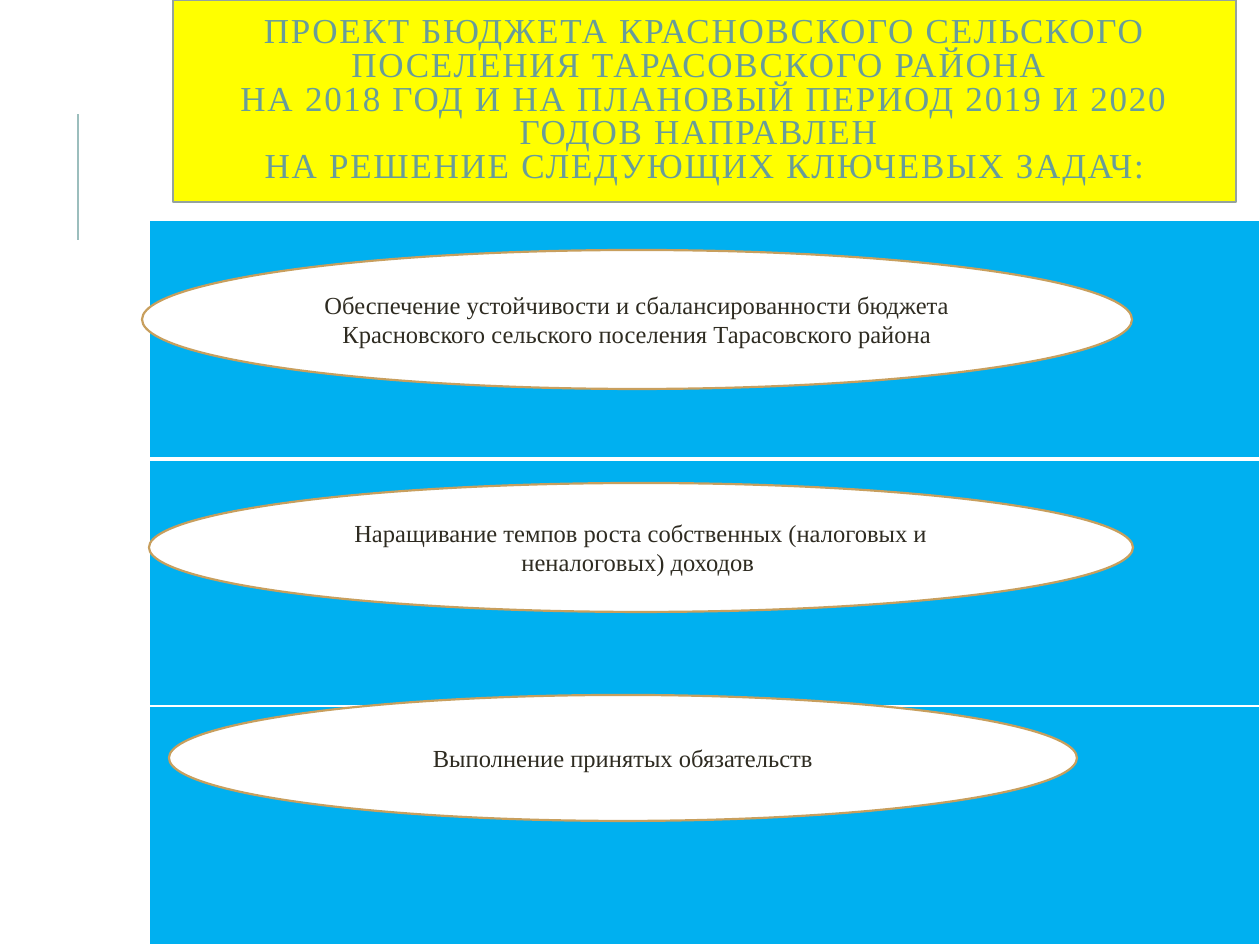
from dataclasses import dataclass

from lxml.etree import SubElement
from pptx import Presentation
from pptx.dml.color import RGBColor
from pptx.enum.shapes import MSO_CONNECTOR as Conn, MSO_SHAPE as Shape
from pptx.enum.text import MSO_ANCHOR as Anchor, PP_ALIGN as Align
from pptx.oxml import parse_xml
from pptx.oxml.ns import nsdecls, qn
from pptx.util import Emu, Pt

EMU_PER_PX = 914400 / 126
FONT = "Times New Roman"


@dataclass
class Box:
    shape: Shape
    x: int
    y: int
    w: int
    h: int
    fill: str
    line: str
    line_pt: float
    text: str
    size: int
    color: str


@dataclass
class Band:
    height: int
    bottom_pt: int


def px(n: int) -> Emu:
    return Emu(round(n * EMU_PER_PX))


def rgb(value: str) -> RGBColor:
    return RGBColor.from_string(value)


def task(x: int, y: int, w: int, h: int, text: str) -> Box:
    return Box(Shape.OVAL, x, y, w, h, "FFFFFF", "C89F5D", 1.25, text, 14, "2E2B21")


TITLE = Box(
    Shape.RECTANGLE, 173, 0, 1063, 202, "FFFF00", "95A39D", 0.75,
    "ПРОЕКТ БЮДЖЕТА КРАСНОВСКОГО СЕЛЬСКОГО ПОСЕЛЕНИЯ ТАРАСОВСКОГО РАЙОНА \v"
    "НА 2018 ГОД И НА ПЛАНОВЫЙ ПЕРИОД 2019 И 2020 ГОДОВ НАПРАВЛЕН \v"
    "НА РЕШЕНИЕ СЛЕДУЮЩИХ КЛЮЧЕВЫХ ЗАДАЧ:", 20, "689C9A")
BANDS = [Band(239, 3), Band(247, 1), Band(239, 1)]
TASKS = [
    task(169, 695, 908, 126, "Выполнение принятых обязательств"),
    task(142, 250, 990, 139, "Обеспечение устойчивости и сбалансированности бюджета "
         "Красновского сельского поселения Тарасовского района"),
    task(149, 483, 984, 129, "Наращивание темпов роста собственных (налоговых и "
         "неналоговых) доходов "),
]


def add_box(s, box: Box):
    sp = s.shapes.add_shape(box.shape, px(box.x), px(box.y), px(box.w), px(box.h))
    sp.shadow.inherit = False
    sp.fill.solid()
    sp.fill.fore_color.rgb = rgb(box.fill)
    sp.line.color.rgb = rgb(box.line)
    sp.line.width = Pt(box.line_pt)
    tf = sp.text_frame
    tf.word_wrap = True
    tf.vertical_anchor = Anchor.MIDDLE
    p = tf.paragraphs[0]
    p.text = box.text
    p.alignment = Align.CENTER
    for r in p.runs:
        r.font.size = Pt(box.size)
        r.font.name = FONT
        r.font.color.rgb = rgb(box.color)
    return sp


def set_borders(cell, top_pt: int, bottom_pt: int) -> None:
    tc_pr = cell._tc.get_or_add_tcPr()
    widths = {"lnL": 1, "lnR": 1, "lnT": top_pt, "lnB": bottom_pt}
    for i, (tag, width) in enumerate(widths.items()):
        tc_pr.insert(i, parse_xml(
            f'<a:{tag} {nsdecls("a")} w="{Pt(width)}"><a:solidFill>'
            f'<a:srgbClr val="FFFFFF"/></a:solidFill></a:{tag}>'))


def add_bands(s, x: int, y: int, w: int, bands: list[Band]) -> None:
    height = sum(b.height for b in bands)
    table = s.shapes.add_table(len(bands), 1, px(x), px(y), px(w), px(height)).table
    top_pt = 1
    for i, band in enumerate(bands):
        table.rows[i].height = px(band.height)
        cell = table.cell(i, 0)
        cell.fill.solid()
        cell.fill.fore_color.rgb = rgb("00B0F0")
        set_borders(cell, top_pt, band.bottom_pt)
        top_pt = band.bottom_pt


def main() -> None:
    prs = Presentation()
    prs.slide_width, prs.slide_height = px(1260), px(945)
    s = prs.slides.add_slide(prs.slide_layouts[6])

    # Side accent line
    accent = s.shapes.add_connector(Conn.STRAIGHT, px(78), px(240), px(78), px(114))
    accent.line.color.rgb = rgb("9CBEBD")
    accent.line.width = Pt(1.5)
    SubElement(accent._element.spPr, qn("a:effectLst"))

    # Title with tight lines and spaced letters
    p = add_box(s, TITLE).text_frame.paragraphs[0]
    p.line_spacing = 0.8
    for r in p.runs:
        r.font._element.set("spc", "100")

    # Blue bands and the key tasks over them
    add_bands(s, 149, 220, 1111, BANDS)
    for box in TASKS:
        add_box(s, box)

    prs.save("out.pptx")


if __name__ == "__main__":
    main()
